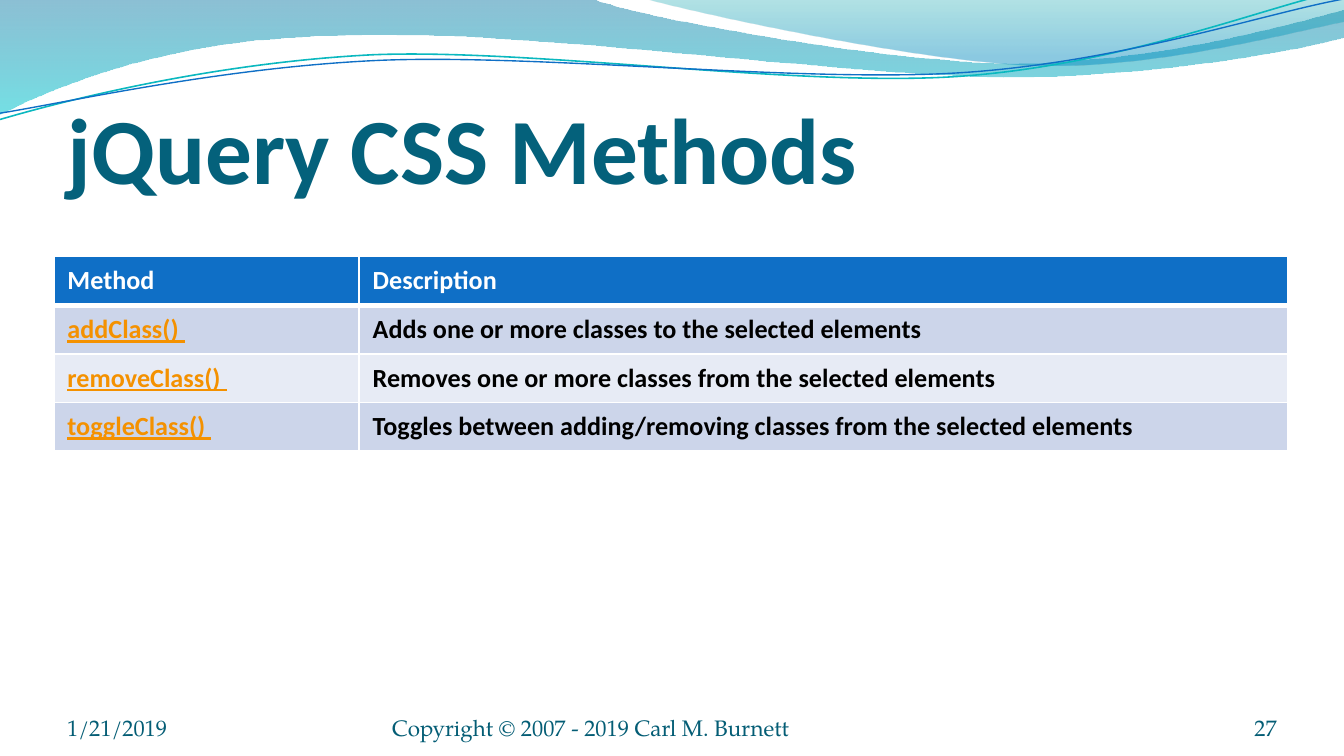
from dataclasses import dataclass

from lxml import etree
from pptx import Presentation
from pptx import util as u
from pptx.dml.color import RGBColor
from pptx.enum import text
from pptx.oxml.ns import qn


@dataclass(frozen=True)
class Theme:
    heading: str = "Calibri"
    small: str = "TeX Gyre Pagella"
    title_color: str = "04617B"
    footer_color: str = "045D75"
    blue: str = "0F6FC6"
    teal: str = "0AB8BF"
    link: str = "F49100"
    white: str = "FFFFFF"
    black: str = "000000"
    bands: tuple = ("CCD5EA", "E7EBF5")
    back_wave: tuple = ((0, "0074A1", 45), (100, "00C6CF", 55))
    front_wave: tuple = ((0, "00A1A9", 30), (80, "008BBF", 45))
    title_size: int = 50
    table_size: int = 14
    footer_size: int = 12


def rgb(value):
    return RGBColor.from_string(value)


class Deck:
    """Holds the theme and the current slide."""

    def __init__(self, theme):
        self.theme = theme
        self.prs = Presentation()
        self.prs.slide_width, self.prs.slide_height = u.Cm(25.4), u.Cm(14.29)
        self.s = self.prs.slides.add_slide(self.prs.slide_layouts[5])

    def run(self, p, words, font, size, color, bold=False, underline=None):
        r = p.add_run()
        r.text = words
        f = r.font
        f.name, f.size, f.bold, f.underline = font, u.Pt(size), bold, underline
        f.color.rgb = rgb(color)

    def frame(self, sp, top=0):
        tf = sp.text_frame
        tf.word_wrap = True
        tf.auto_size = text.MSO_AUTO_SIZE.NONE
        tf.vertical_anchor = text.MSO_ANCHOR.BOTTOM
        tf.margin_left = tf.margin_right = tf.margin_bottom = 0
        tf.margin_top = u.Cm(top)
        return tf.paragraphs[0]

    def freeform(self, start, steps, close):
        """Each step is a line (x, y) or a cubic curve of six numbers."""
        pts = [(u.Cm(x), u.Cm(y)) for step in steps
               for x, y in zip(step[::2], step[1::2])]
        fb = self.s.shapes.build_freeform(*map(u.Cm, start), scale=1.0)
        fb.add_line_segments(pts, close=close)
        sp = fb.convert_to_shape()
        sp.shadow.inherit = False
        segments = iter(list(sp._element.iter(qn("a:lnTo"))))
        for step in steps:
            first = next(segments)
            if len(step) == 6:  # merge three line ends into one curve
                first.tag = qn("a:cubicBezTo")
                for _ in range(2):
                    other = next(segments)
                    first.append(other[0])
                    other.getparent().remove(other)
        return sp

    def wave(self, stops, start, steps):
        sp = self.freeform(start, steps, True)
        sp.line.fill.background()
        sp.fill.gradient()
        sp.fill.gradient_angle = 270
        for stop, (pos, color, _) in zip(sp.fill.gradient_stops, stops):
            stop.position = pos / 100
            stop.color.rgb = rgb(color)
        colors = sp._element.spPr.iter(qn("a:srgbClr"))
        for clr, (_, _, opacity) in zip(colors, stops):
            etree.SubElement(clr, qn("a:alpha"), val=str(opacity * 1000))

    def curve(self, color, width, start, steps):
        sp = self.freeform(start, steps, False)
        sp.rotation = 357.3
        sp.fill.background()
        sp.line.color.rgb = rgb(color)
        sp.line.width = u.Pt(width)

    def title(self, words):
        th, sp = self.theme, self.s.shapes.title
        sp.left, sp.top, sp.width, sp.height = map(u.Cm, (1.27, 1.46, 23.06, 2.39))
        p = self.frame(sp, top=0.13)
        p.alignment = text.PP_ALIGN.LEFT
        self.run(p, words, th.heading, th.title_size, th.title_color, bold=True)
        self.s.shapes._spTree.append(sp._element)  # in front of the waves

    def borders(self, cell, **widths):
        tcPr = cell._tc.get_or_add_tcPr()
        for i, side in enumerate("LRTB"):
            ln = etree.Element(qn(f"a:ln{side}"), w=str(u.Pt(widths.get(side, 1))))
            fill = etree.SubElement(ln, qn("a:solidFill"))
            etree.SubElement(fill, qn("a:srgbClr"), val=self.theme.white)
            tcPr.insert(i, ln)

    def table(self, rows, left, top, widths, row_height):
        th = self.theme
        shape = self.s.shapes.add_table(
            len(rows), len(widths), u.Cm(left), u.Cm(top),
            u.Cm(sum(widths)), u.Cm(row_height * len(rows)))
        tbl = shape.table
        for col, width in zip(tbl.columns, widths):
            col.width = u.Cm(width)
        for i, row in enumerate(rows):
            for j, words in enumerate(row):
                cell = tbl.cell(i, j)
                cell.vertical_anchor = text.MSO_ANCHOR.MIDDLE
                cell.fill.solid()
                cell.fill.fore_color.rgb = rgb(th.bands[(i - 1) % 2] if i else th.blue)
                self.borders(cell, T=3 if i == 1 else 1, B=1 if i else 3)
                is_link = i > 0 and j == 0
                color = th.link if is_link else th.black if i else th.white
                self.run(cell.text_frame.paragraphs[0], words, th.heading,
                         th.table_size, color, bold=True, underline=is_link or None)

    def footer(self, words, left, width, align=text.PP_ALIGN.LEFT):
        th = self.theme
        sp = self.s.shapes.add_textbox(*map(u.Cm, (left, 13.24, width, 0.76)))
        p = self.frame(sp)
        p.alignment = align
        self.run(p, words, th.small, th.footer_size, th.footer_color)


def main():
    th = Theme()
    deck = Deck(th)
    deck.wave(th.back_wave, (0, 0), [
        (11.18, -0.03),
        (12.09, 0.33, 16.87, 1.19, 19.25, 1.19),
        (21.67, 1.19, 24.33, 0.48, 25.4, 0.18),
        (25.43, 0.69),
        (24.97, 0.84, 22.1, 1.45, 18.95, 1.45),
        (15.8, 1.42, 9.7, 0.53, 6.53, 0.66),
        (3.28, 0.69, 1.17, 1.57, -0.03, 2.16),
        (0, 0)])
    deck.wave(th.front_wave, (12.17, -0.03), [
        (12.93, 0.2, 17.32, 1.17, 19.53, 1.24),
        (21.74, 1.32, 24.41, 0.61, 25.4, 0.41),
        (25.4, 0),
        (12.17, -0.03)])
    deck.curve(th.teal, 0.85, (-0.04, 1.66), [
        (1.19, 1.36, 4.02, 0.78, 7.05, 0.77),
        (10.07, 0.79, 15.01, 1.76, 18.06, 1.7),
        (21.14, 1.64, 23.88, 0.68, 25.39, 0.42)])
    deck.curve(th.blue, 0.75, (-0.04, 1.54), [
        (1.17, 1.41, 4.17, 0.87, 7.19, 0.88),
        (10.24, 0.9, 15.14, 1.69, 18.19, 1.63),
        (21.22, 1.57, 23.93, 0.78, 25.44, 0.58)])
    deck.title("jQuery CSS Methods")
    deck.table([
        ("Method", "Description"),
        ("addClass() ", "Adds one or more classes to the selected elements"),
        ("removeClass() ", "Removes one or more classes from the selected elements"),
        ("toggleClass() ",
         "Toggles between adding/removing classes from the selected elements"),
    ], left=1.02, top=4.85, widths=(5.77, 17.55), row_height=0.92)
    deck.footer("1/21/2019", 1.27, 5.92)
    deck.footer("Copyright © 2007 - 2019 Carl M. Burnett", 7.41, 9.31)
    deck.footer("27", 22.01, 2.12, text.PP_ALIGN.RIGHT)
    deck.prs.save("out.pptx")


if __name__ == "__main__":
    main()
